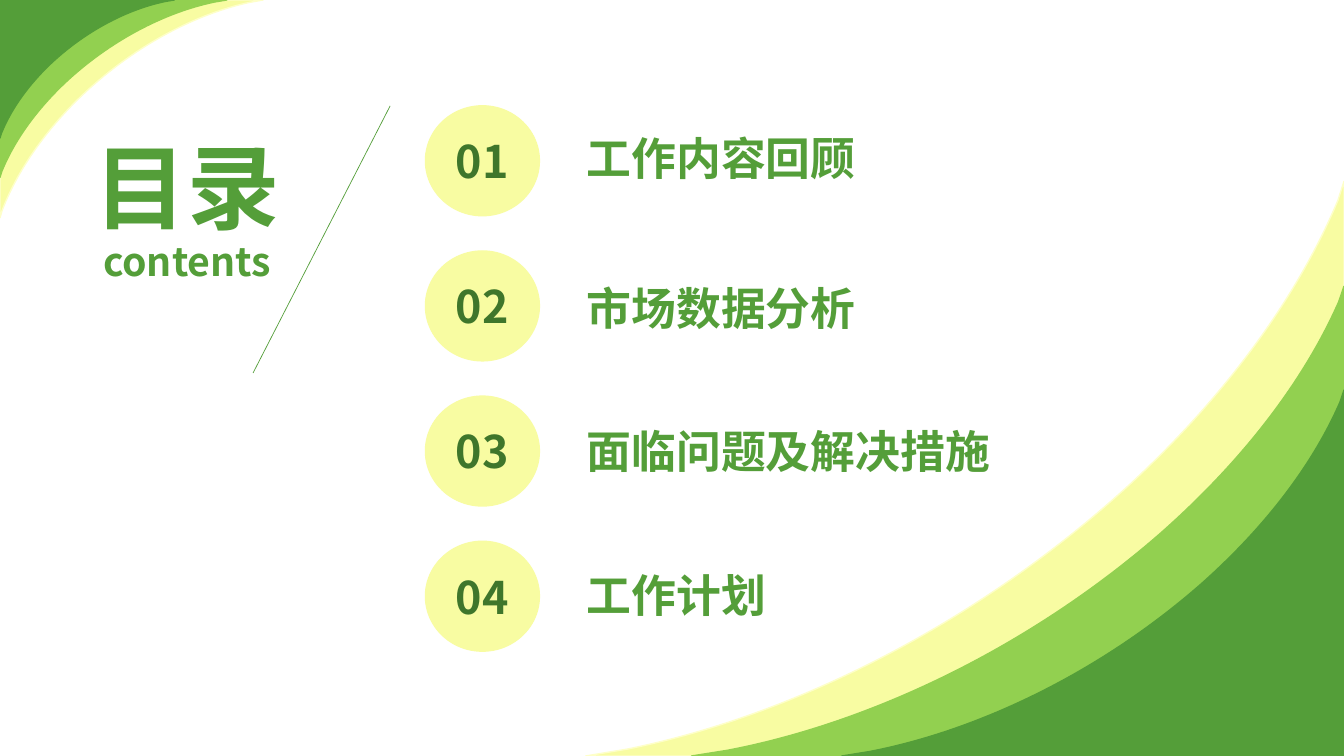
from dataclasses import dataclass

from lxml import etree
from pptx import Presentation
from pptx.dml.color import RGBColor
from pptx.enum.shapes import MSO_CONNECTOR, MSO_SHAPE
from pptx.enum.text import MSO_ANCHOR, MSO_AUTO_SIZE, PP_ALIGN
from pptx.oxml.ns import qn
from pptx.util import Inches, Pt

CENTER, LEFT = PP_ALIGN.CENTER, PP_ALIGN.LEFT
TOP, MIDDLE = MSO_ANCHOR.TOP, MSO_ANCHOR.MIDDLE
CIRCLE = MSO_SHAPE.FLOWCHART_CONNECTOR
STRAIGHT = MSO_CONNECTOR.STRAIGHT
NO_FIT, GROW = MSO_AUTO_SIZE.NONE, MSO_AUTO_SIZE.SHAPE_TO_FIT_TEXT


@dataclass(frozen=True)
class Theme:
    font: str = "Noto Sans CJK SC"
    green: str = "549E39"
    dark: str = "3F762B"
    lime: str = "92D050"
    yellow: str = "F8FCA2"
    cream: str = "FEFFC9"
    title: int = 66
    gap: int = 11
    subtitle: int = 28
    item: int = 32


T = Theme()
SLIDE_W, SLIDE_H = 13.33, 7.5

# Band outline as fractions of its width and height, measured from the corner:
# a short line, two cubic curves of three points each, a short line, the corner
OUTLINE = [
    (1, 0), (0.945, 0.012),
    (0.723, 0.071), (0.481, 0.233), (0.283, 0.472),
    (0.152, 0.632), (0.06, 0.803), (0.008, 0.967),
    (0, 1), (0, 0),
]
CURVE_STARTS = (1, 4)

# Label, top and width
ITEMS = [
    ("工作内容回顾", 1.25, 4.12),
    ("市场数据分析", 2.74, 4.12),
    ("面临问题及解决措施", 4.15, 4.84),
    ("工作计划", 5.58, 4.12),
]


def rgb(color):
    return RGBColor.from_string(color)


def style_paragraph(p, size, color, align):
    p.alignment = align
    p.font.name = T.font
    p.font.size = Pt(size)
    p.font.bold = True
    p.font.color.rgb = rgb(color)
    latin = p.font._element.find(qn("a:latin"))
    latin.addnext(etree.Element(qn("a:ea"), typeface=T.font))


def paint(sp, fill, line):
    sp.shadow.inherit = False
    sp.fill.solid()
    sp.fill.fore_color.rgb = rgb(fill)
    sp.line.color.rgb = rgb(line)
    sp.line.width = Pt(1)


def curve_segments(sp):
    """Join each triple of line segments into one cubic curve."""
    lines = list(sp._element.iter(qn("a:lnTo")))
    for start in CURVE_STARTS:
        curve = etree.Element(qn("a:cubicBezTo"))
        lines[start].addprevious(curve)
        for line in lines[start:start + 3]:
            curve.append(line[0])
            line.getparent().remove(line)


def add_corner(slide, corner, direction, bands):
    """Nested curved bands that grow from a slide corner."""
    for w, h, fill, line in bands:
        points = [(Inches(corner[0] + direction * w * u),
                   Inches(corner[1] + direction * h * v)) for u, v in OUTLINE]
        builder = slide.shapes.build_freeform(*points[0])
        builder.add_line_segments(points[1:], close=True)
        sp = builder.convert_to_shape()
        curve_segments(sp)
        paint(sp, fill, line)


def add_heading(slide, x, y, w, h):
    """Title that wraps before its subtitle, and the slanted rule beside it."""
    title = slide.shapes.title
    title.left, title.top, title.width, title.height = map(Inches, (x, y, w, h))
    tf = title.text_frame
    tf.auto_size = NO_FIT
    tf.word_wrap = True
    tf.vertical_anchor = TOP
    p = tf.paragraphs[0]
    p.line_spacing = 0.9
    p.space_before = Pt(0)
    style_paragraph(p, T.title, T.green, CENTER)
    for text, size in (("目录", T.title), (" ", T.gap), ("contents", T.subtitle)):
        r = p.add_run()
        r.text = text
        r.font.size = Pt(size)
    # A wide gap moves the first line left of the subtitle's centre
    p.runs[1].font._element.set("spc", "2050")

    rule = slide.shapes.add_connector(
        STRAIGHT, Inches(x + 3.32), Inches(y - 0.32),
        Inches(x + 1.96), Inches(y + 2.33))
    rule.line.color.rgb = rgb(T.green)
    rule.line.width = Pt(0.5)
    etree.SubElement(rule._element.spPr, qn("a:effectLst"))


def add_contents(slide, x, y, step):
    """Numbered circles with their labels."""
    for i, (label, label_top, label_w) in enumerate(ITEMS):
        sp = slide.shapes.add_shape(CIRCLE, Inches(x), Inches(y + i * step),
                                    Inches(1.13), Inches(1.09))
        paint(sp, T.yellow, T.yellow)
        tf = sp.text_frame
        tf.vertical_anchor = MIDDLE
        tf.text = f"{i + 1:02}"
        style_paragraph(tf.paragraphs[0], T.item, T.dark, CENTER)

        box = slide.shapes.add_textbox(Inches(x + 1.5), Inches(label_top),
                                       Inches(label_w), Inches(0.64))
        tf = box.text_frame
        tf.word_wrap = True
        tf.auto_size = GROW
        tf.text = label
        style_paragraph(tf.paragraphs[0], T.item, T.green, LEFT)


def main():
    prs = Presentation()
    prs.slide_width, prs.slide_height = Inches(SLIDE_W), Inches(SLIDE_H)
    slide = prs.slides.add_slide(prs.slide_layouts[5])

    # Corner decoration
    add_corner(slide, (SLIDE_W, SLIDE_H), -1, [
        (7.52, 5.7, T.yellow, T.cream),
        (6.47, 4.66, T.lime, T.lime),
        (4.98, 3.63, T.green, T.green),
    ])
    add_corner(slide, (0, 0), 1, [
        (2.61, 2.16, T.yellow, T.cream),
        (2.25, 1.76, T.lime, T.lime),
        (1.73, 1.37, T.green, T.green),
    ])

    # Heading and list
    add_heading(slide, 0.55, 1.37, 2.61, 1.76)
    add_contents(slide, 4.22, 1.05, 1.44)

    prs.save("out.pptx")


if __name__ == "__main__":
    main()
